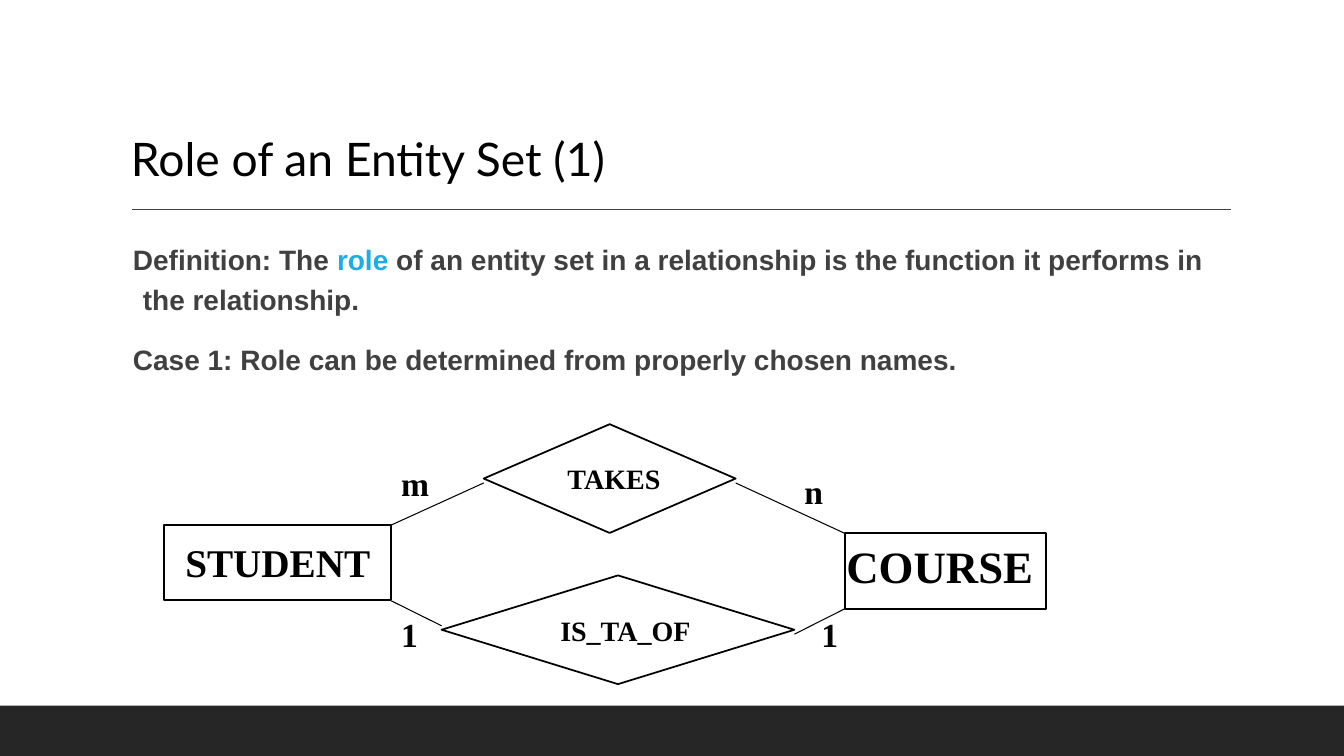
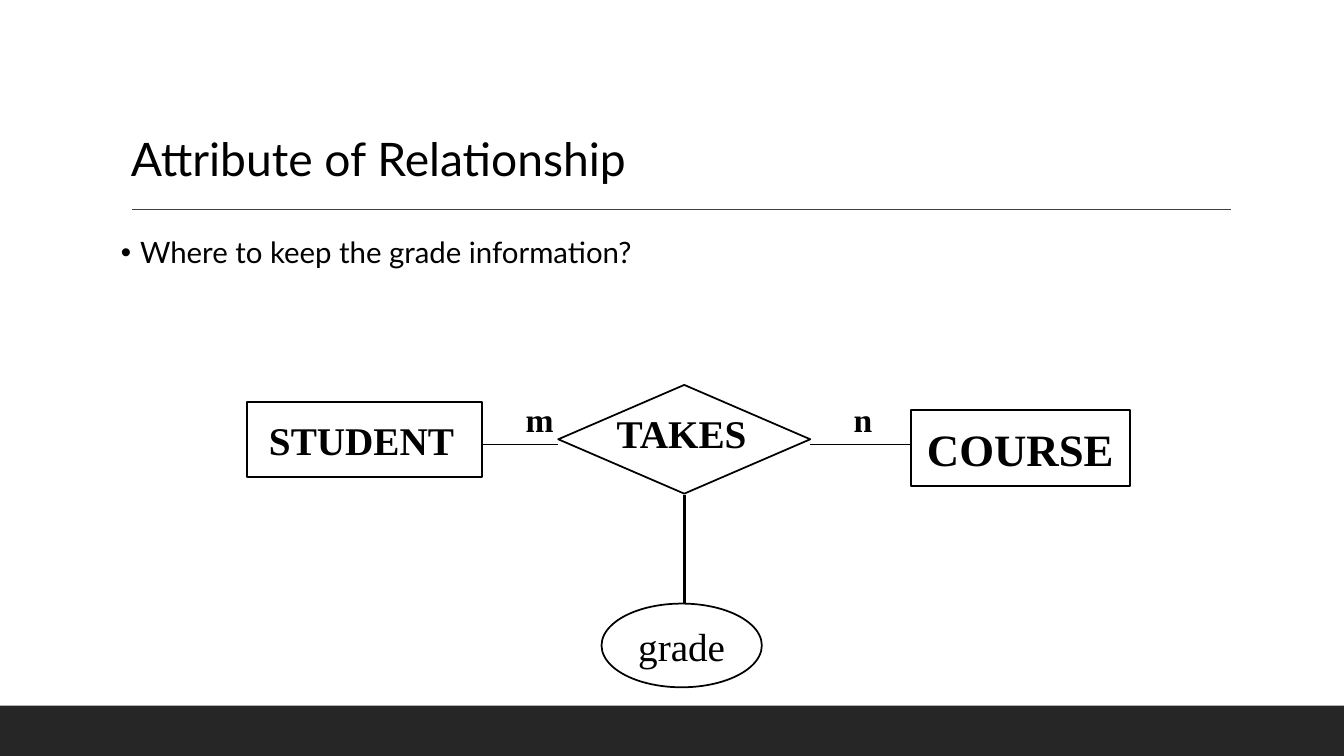
from dataclasses import dataclass

import lxml.etree
import pptx
import pptx.dml.color
import pptx.enum.shapes
import pptx.enum.text
import pptx.oxml.ns
import pptx.shapes.autoshape
import pptx.slide
import pptx.text.text
import pptx.util

Cm = pptx.util.Cm
Pt = pptx.util.Pt
Shape = pptx.enum.shapes.MSO_SHAPE
Align = pptx.enum.text.PP_ALIGN
Anchor = pptx.enum.text.MSO_ANCHOR
qn = pptx.oxml.ns.qn

COLORS = {
    "black": "000000",
    "text": "404040",
    "accent": "1CADE4",
    "band": "262626",
}
TITLE_FONT, BODY_FONT, DIAGRAM_FONT = "Lato", "Arial", "Times New Roman"
PAGE_WIDTH, PAGE_HEIGHT = 33.87, 19.05
BAND_HEIGHT = 1.27
OUTLINE, THIN, THICK = 1.25, 0.75, 1.5


# Repeated elements; all lengths in centimetres
@dataclass(frozen=True)
class Area:
    left: float
    top: float
    width: float
    height: float

    def lengths(self) -> tuple[pptx.util.Length, ...]:
        return Cm(self.left), Cm(self.top), Cm(self.width), Cm(self.height)


@dataclass(frozen=True)
class Span:
    text: str
    size: float
    font: str
    color: str = "black"
    bold: bool = False


@dataclass(frozen=True)
class Label:
    text: str
    size: float
    area: Area


@dataclass(frozen=True)
class Node:
    shape: Shape
    area: Area
    text: str = ""


@dataclass(frozen=True)
class Link:
    x1: float
    y1: float
    x2: float
    y2: float
    width: float = THIN
    color: str = "black"


@dataclass(frozen=True)
class BodyStyle:
    area: Area
    hang: float
    line_spacing: float
    before: float
    after: float = 0
    bullet: str = ""


def rgb(name: str) -> pptx.dml.color.RGBColor:
    return pptx.dml.color.RGBColor.from_string(COLORS[name])


def add_span(para: pptx.text.text._Paragraph, span: Span) -> None:
    run = para.add_run()
    run.text = span.text
    run.font.name = span.font
    run.font.size = Pt(span.size)
    run.font.bold = span.bold
    run.font.color.rgb = rgb(span.color)


def add_box(page: pptx.slide.Slide, area: Area,
            wrap: bool = True) -> pptx.text.text.TextFrame:
    frame = page.shapes.add_textbox(*area.lengths()).text_frame
    frame.word_wrap = wrap
    return frame


def add_link(page: pptx.slide.Slide, link: Link) -> None:
    line = page.shapes.add_connector(
        pptx.enum.shapes.MSO_CONNECTOR.STRAIGHT,
        Cm(link.x1), Cm(link.y1), Cm(link.x2), Cm(link.y2))
    line.line.color.rgb = rgb(link.color)
    line.line.width = Pt(link.width)
    properties = line._element.find(qn("p:spPr"))
    lxml.etree.SubElement(properties, qn("a:effectLst"))


def add_label(page: pptx.slide.Slide, label: Label) -> None:
    frame = add_box(page, label.area, wrap=False)
    frame.auto_size = pptx.enum.text.MSO_AUTO_SIZE.SHAPE_TO_FIT_TEXT
    add_span(frame.paragraphs[0],
             Span(label.text, label.size, DIAGRAM_FONT, bold=True))


def add_node(page: pptx.slide.Slide, node: Node) -> None:
    shape = page.shapes.add_shape(node.shape, *node.area.lengths())
    shape.shadow.inherit = False
    shape.fill.background()
    shape.line.color.rgb = rgb("black")
    shape.line.width = Pt(OUTLINE)
    if node.text:
        frame = shape.text_frame
        frame.word_wrap = False
        frame.vertical_anchor = Anchor.MIDDLE
        para = frame.paragraphs[0]
        para.alignment = Align.CENTER
        add_span(para, Span(node.text, 28, DIAGRAM_FONT))


def add_body(page: pptx.slide.Slide, style: BodyStyle,
             paragraphs: list[list[Span]]) -> None:
    frame = add_box(page, style.area)
    frame.margin_left = frame.margin_right = 0
    for index, spans in enumerate(paragraphs):
        para = frame.add_paragraph() if index else frame.paragraphs[0]
        para.line_spacing = style.line_spacing
        para.space_before = Pt(style.before)
        para.space_after = Pt(style.after)
        # Hanging indent and bullet
        properties = para._p.get_or_add_pPr()
        properties.set("marL", str(Cm(style.hang)))
        properties.set("indent", str(-Cm(style.hang)))
        if style.bullet:
            font = lxml.etree.SubElement(properties, qn("a:buFont"))
            font.set("typeface", BODY_FONT)
            bullet = lxml.etree.SubElement(properties, qn("a:buChar"))
            bullet.set("char", style.bullet)
        for span in spans:
            add_span(para, span)


def add_page(deck: pptx.presentation.Presentation,
             title: str) -> pptx.slide.Slide:
    page = deck.slides.add_slide(deck.slide_layouts[6])
    # Bottom band
    band_area = Area(0, PAGE_HEIGHT - BAND_HEIGHT, PAGE_WIDTH, BAND_HEIGHT)
    band = page.shapes.add_shape(Shape.RECTANGLE, *band_area.lengths())
    band.shadow.inherit = False
    band.fill.solid()
    band.fill.fore_color.rgb = rgb("band")
    band.line.fill.background()
    # Title and the rule below it
    add_link(page, Link(3.33, 5.28, 31.01, 5.28, 1, "text"))
    frame = add_box(page, Area(3.05, 0.79, 27.94, 4.04))
    frame.vertical_anchor = Anchor.BOTTOM
    para = frame.paragraphs[0]
    para.line_spacing = 0.9
    add_span(para, Span(title, 33, TITLE_FONT))
    return page


def add_diagram(page: pptx.slide.Slide, labels: list[Label],
                nodes: list[Node], links: list[Link]) -> None:
    for label in labels:
        add_label(page, label)
    for node in nodes:
        add_node(page, node)
    for link in links:
        add_link(page, link)


# Label builders for the names used on both pages
def student(left: float, top: float) -> Label:
    return Label("STUDENT", 28, Area(left, top, 5.23, 1.45))


def course(left: float, top: float) -> Label:
    return Label("COURSE", 32, Area(left, top, 5.26, 1.63))


def cardinality(text: str, left: float, top: float) -> Label:
    widths = {"1": 0.94, "m": 1.22, "n": 0.99}
    return Label(text, 24, Area(left, top, widths[text], 1.27))


def entity(left: float, top: float, width: float) -> Node:
    return Node(Shape.RECTANGLE, Area(left, top, width, 1.9))


def relationship(left: float, top: float, width: float = 6.35) -> Node:
    return Node(Shape.DIAMOND, Area(left, top, width, 2.74))


def build_role_page(deck: pptx.presentation.Presentation) -> None:
    page = add_page(deck, "Role of an Entity Set (1)")

    def strong(text: str, color: str = "text") -> Span:
        return Span(text, 20, BODY_FONT, color, bold=True)

    add_body(
        page,
        BodyStyle(Area(3.35, 5.82, 27.36, 8.92), 0.25, 1.2, 12, 2),
        [
            [strong("Definition: The "), strong("role", "accent"),
             strong(" of an entity set in a relationship is the function "
                    "it performs in the relationship.")],
            [strong("Case 1: Role can be determined from properly "
                    "chosen names.")],
        ])
    add_diagram(
        page,
        labels=[
            student(4.42, 13.44),
            course(21.08, 13.44),
            Label("TAKES", 20, Area(14.05, 11.51, 2.87, 1.12)),
            Label("IS_TA_OF", 20, Area(13.87, 15.34, 3.84, 1.12)),
            cardinality("m", 9.86, 11.53),
            cardinality("n", 20.02, 11.73),
            cardinality("1", 9.86, 15.34),
            cardinality("1", 20.45, 15.34),
        ],
        nodes=[
            entity(4.14, 13.23, 5.72),
            entity(21.29, 13.44, 5.08),
            relationship(12.19, 10.69),
            relationship(11.13, 14.5, 8.89),
        ],
        links=[
            Link(9.86, 13.23, 12.19, 12.17),
            Link(18.54, 12.17, 21.29, 13.44),
            Link(9.86, 15.14, 11.13, 15.77),
            Link(20.02, 15.98, 21.29, 15.34),
        ])


def build_attribute_page(deck: pptx.presentation.Presentation) -> None:
    page = add_page(deck, "Attribute of Relationship")
    add_body(
        page,
        BodyStyle(Area(3.05, 5.87, 27.94, 10.44), 0.48, 0.9, 7.5, bullet="•"),
        [[Span("Where to keep the grade information?", 21, TITLE_FONT)]])
    add_diagram(
        page,
        labels=[
            student(6.53, 10.36),
            course(23.11, 10.49),
            Label("TAKES", 28, Area(15.29, 10.19, 3.81, 1.45)),
            cardinality("m", 13, 9.93),
            cardinality("n", 21.26, 9.93),
        ],
        nodes=[
            entity(6.22, 10.13, 5.92),
            entity(22.96, 10.34, 5.51),
            relationship(14.07, 9.7),
            Node(Shape.OVAL, Area(15.16, 15.21, 4.04, 2.11), "grade"),
        ],
        links=[
            Link(12.17, 11.2, 14.07, 11.2),
            Link(20.42, 11.2, 22.96, 11.2),
            Link(17.25, 15.21, 17.25, 12.47, THICK),
        ])


def main() -> None:
    deck = pptx.Presentation()
    deck.slide_width = Cm(PAGE_WIDTH)
    deck.slide_height = Cm(PAGE_HEIGHT)
    build_role_page(deck)
    build_attribute_page(deck)
    deck.save("out.pptx")


if __name__ == "__main__":
    main()
